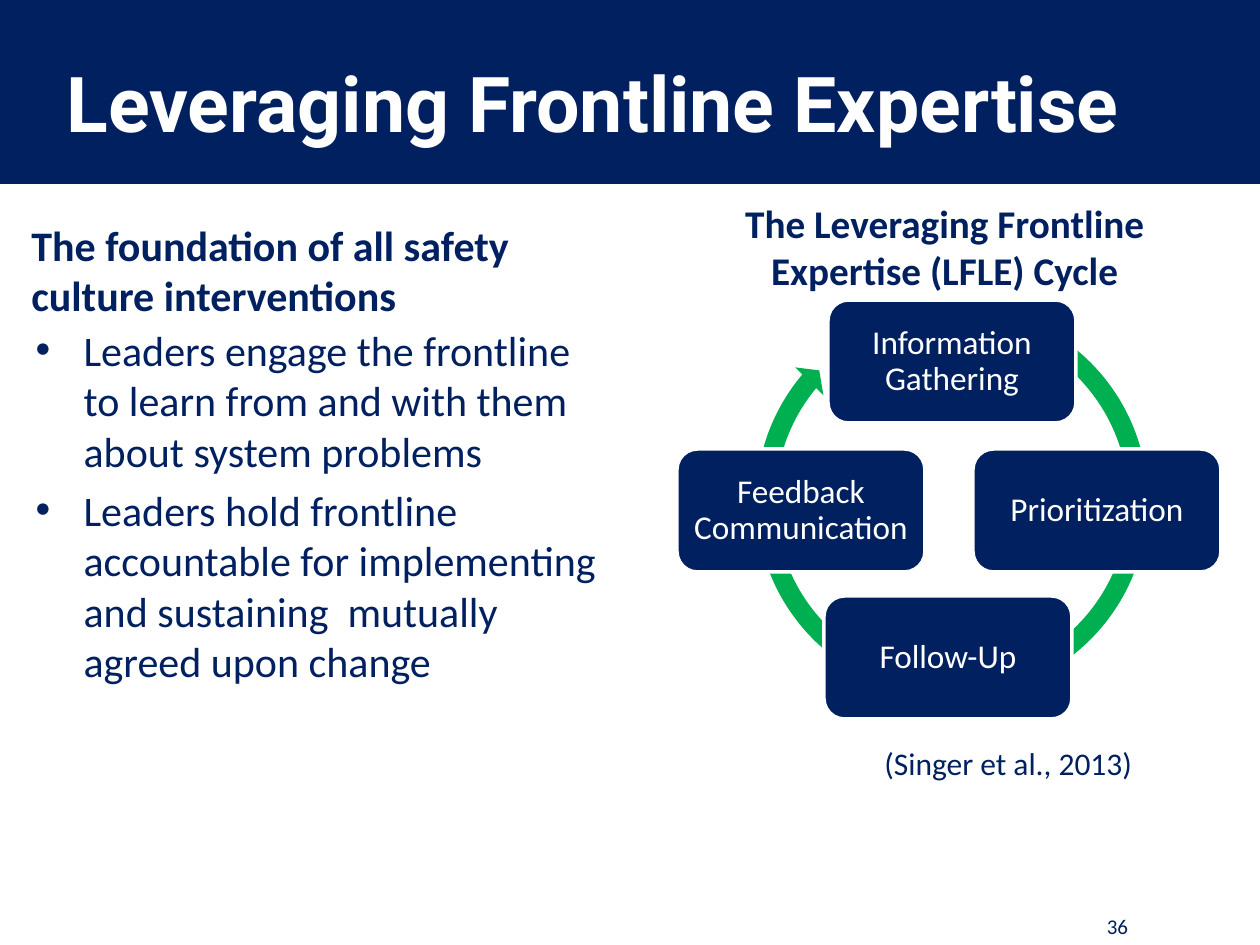
import pptx
import pptx.util
import pptx.dml.color
import pptx.enum.shapes
import pptx.enum.text

SHAPE = pptx.enum.shapes.MSO_SHAPE
ALIGN = pptx.enum.text.PP_ALIGN
MID = pptx.enum.text.MSO_ANCHOR.MIDDLE
TOP = pptx.enum.text.MSO_ANCHOR.TOP
Pt = pptx.util.Pt
PX = 914400 // 126

HUES = {"navy": "002060", "white": "FFFFFF", "green": "00B050"}

TITLE = "Leveraging Frontline Expertise"
POINTS = [
    "Leaders engage the frontline to learn from and with them about system problems",
    "Leaders hold frontline accountable for implementing and sustaining  mutually agreed upon change",
]
STEPS = [
    ("Information Gathering", 828, 300),
    ("Prioritization", 973, 449),
    ("Follow-Up", 824, 596),
    ("Feedback Communication", 677, 449),
]
STEP_W, STEP_H = 248, 123
RING = (746, 295, 412, 412)
THICK, FLARE, HEAD, TAIL, WIDE = 4700, 4.55, 220, 296.42, 4800

BASE = {"name": "Calibri", "bold": False}
LEFT = {"alignment": ALIGN.LEFT}
CENTER = {"alignment": ALIGN.CENTER}
GAP = {"space_before": Pt(5)}

NOTES = [
    ("The foundation of all safety culture interventions",
     (19, 213, 580, 132), {"size": Pt(24), "bold": True}, LEFT | GAP, {}),
    ("The Leveraging Frontline Expertise (LFLE) Cycle",
     (688, 193, 514, 88), {"size": Pt(22.4), "bold": True}, CENTER | GAP, {}),
    ("(Singer et al., 2013)",
     (872, 738, 276, 89), {"size": Pt(18)}, LEFT, {"word_wrap": False}),
    ("36", (1081, 907, 73, 38), {"size": Pt(12)}, CENTER, {"vertical_anchor": MID}),
]


def rgb(hue):
    return pptx.dml.color.RGBColor.from_string(HUES[hue])


def assign(item, style):
    for key, value in style.items():
        setattr(item, key, value)


def place(shape, box):
    assign(shape, dict(zip(("left", "top", "width", "height"), (n * PX for n in box))))


def write(shape, lines, hue, font, para, frame):
    body = shape.text_frame
    assign(body, {"word_wrap": True, "auto_size": pptx.enum.text.MSO_AUTO_SIZE.NONE} | frame)
    for i, line in enumerate(lines):
        part = body.paragraphs[0] if i == 0 else body.add_paragraph()
        assign(part, para)
        run = part.add_run()
        run.text = line
        assign(run.font, BASE | font)
        run.font.color.rgb = rgb(hue)


def draw(slide, kind, box, hue):
    shape = slide.shapes.add_shape(kind, *(n * PX for n in box))
    shape.shadow.inherit = False
    shape.fill.solid()
    shape.fill.fore_color.rgb = rgb(hue)
    shape.line.fill.background()
    return shape


def main():
    deck = pptx.Presentation()
    deck.slide_width, deck.slide_height = 1260 * PX, 945 * PX
    slide = deck.slides.add_slide(deck.slide_layouts[1])

    band = draw(slide, SHAPE.RECTANGLE, (0, 0, 1260, 184), "navy")
    slide.shapes._spTree.insert(2, band._element)

    title = slide.shapes.title
    place(title, (54, 23, 1166, 157))
    write(title, [TITLE], "white", {"name": "Roboto", "size": Pt(44), "bold": True},
          LEFT, {"vertical_anchor": MID})

    points = slide.placeholders[1]
    place(points, (23, 318, 590, 380))
    write(points, POINTS, "navy", {"size": Pt(24)}, LEFT | GAP, {"vertical_anchor": TOP})
    for part in points.text_frame.paragraphs:
        props = part._p.get_or_add_pPr()
        props.set("marL", str(48 * PX))
        props.set("indent", str(-48 * PX))

    ring = draw(slide, SHAPE.CIRCULAR_ARROW, RING, "green")
    turns = [round(turn * 60000) for turn in (FLARE, HEAD, TAIL)]
    for i, value in enumerate([THICK, *turns, WIDE]):
        ring.adjustments[i] = value / 100000

    sides = ("margin_left", "margin_top", "margin_right", "margin_bottom")
    inset = dict.fromkeys(sides, 10 * PX)
    for name, x, y in STEPS:
        step = draw(slide, SHAPE.ROUNDED_RECTANGLE, (x, y, STEP_W, STEP_H), "navy")
        step.line.color.rgb = rgb("white")
        step.line.width = Pt(2)
        write(step, [name], "white", {"size": Pt(19)},
              CENTER | {"line_spacing": 0.9}, inset | {"vertical_anchor": MID})

    for words, box, font, para, frame in NOTES:
        note = slide.shapes.add_textbox(*(n * PX for n in box))
        write(note, [words], "navy", font, para, frame)

    deck.save("out.pptx")


if __name__ == "__main__":
    main()
